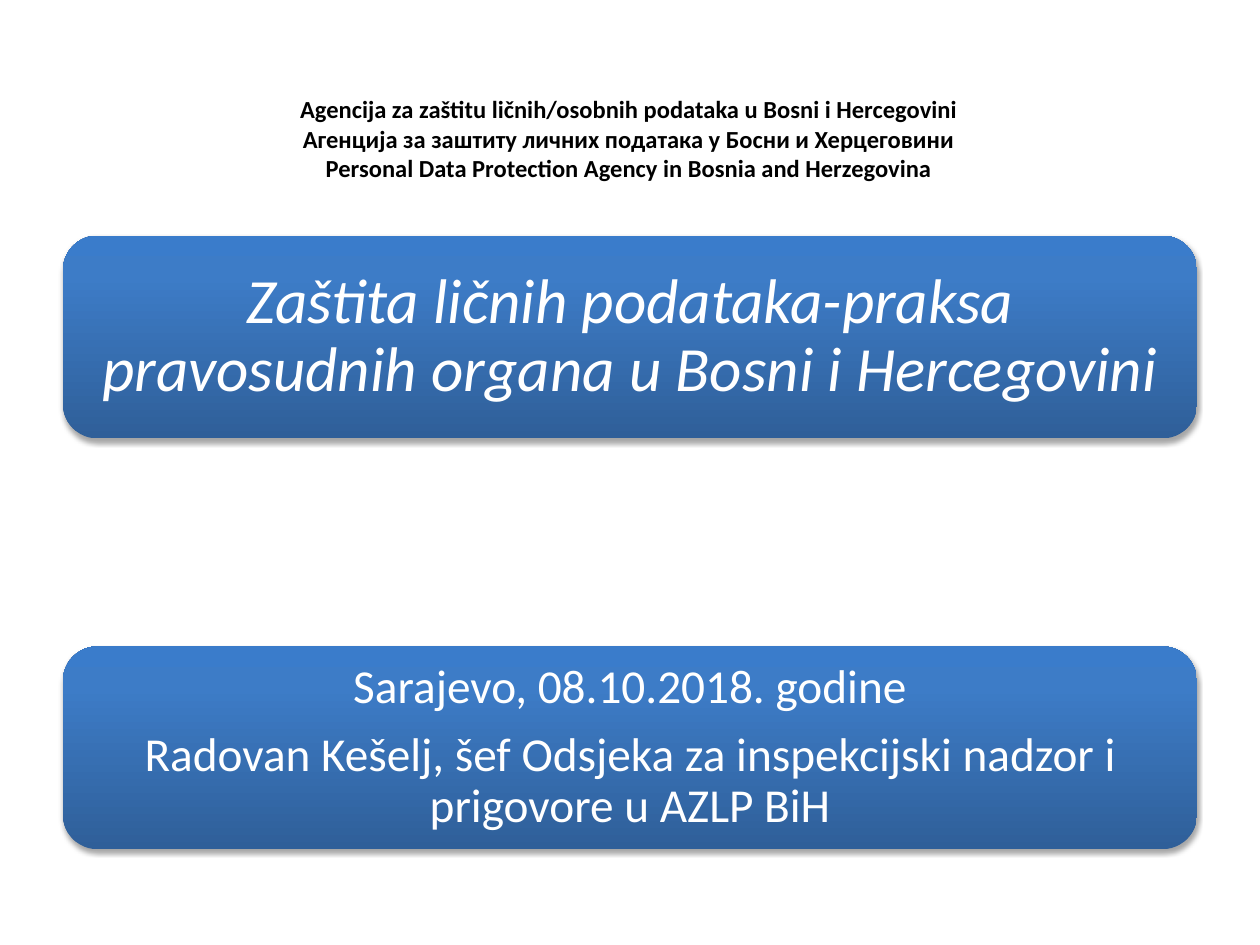
from lxml.etree import SubElement
from pptx import Presentation
from pptx.dml.color import RGBColor
from pptx.enum.shapes import MSO_SHAPE
from pptx.enum.text import MSO_ANCHOR, MSO_AUTO_SIZE, PP_ALIGN
from pptx.oxml import parse_xml
from pptx.oxml.ns import nsdecls, qn
from pptx.util import Inches, Pt

COLORS = {"ink": "000000", "light": "FFFFFF", "bottom": "2F5F99", "middle": "3D7CC7", "top": "3A7CCB"}
STOPS = [(0, "bottom"), (80, "middle"), (100, "top")]


def write_text(box, lines, size, color, bold=False, italic=False, inset=0.1,
               anchor=MSO_ANCHOR.MIDDLE, spacing=0.9, after=0):
    frame = box.text_frame
    frame.word_wrap = True
    frame.auto_size = MSO_AUTO_SIZE.NONE
    frame.vertical_anchor = anchor
    frame.margin_left = frame.margin_right = Inches(inset)
    frame.margin_top = frame.margin_bottom = Inches(min(inset, 0.15) if spacing < 1 else 0.05)
    frame.text = "\n".join(lines)
    for para in frame.paragraphs:
        para.alignment = PP_ALIGN.CENTER
        para.line_spacing = spacing
        para.space_before = Pt(0)
        para.space_after = Pt(after)
        for span in para.runs:
            span.font.name = "Calibri"
            span.font.size = Pt(size)
            span.font.bold = bold
            span.font.italic = italic
            span.font.color.rgb = RGBColor.from_string(COLORS[color])


def add_panel(page, left, top, width, height):
    panel = page.shapes.add_shape(MSO_SHAPE.ROUNDED_RECTANGLE, left, top, width, height)
    panel.adjustments[0] = 0.17
    panel.line.fill.background()
    panel.fill.gradient()
    gradient = panel._element.spPr.find(qn("a:gradFill"))
    stop_list = gradient.find(qn("a:gsLst"))
    for stop in list(stop_list):
        stop_list.remove(stop)
    for share, name in STOPS:
        stop = SubElement(stop_list, qn("a:gs"), pos=str(share * 1000))
        SubElement(stop, qn("a:srgbClr"), val=COLORS[name])
    gradient.find(qn("a:lin")).set("ang", str(270 * 60000))
    panel._element.spPr.append(parse_xml(
        f'<a:effectLst {nsdecls("a")}><a:outerShdw blurRad="{Pt(3.1)}" dist="{Pt(1.8)}" '
        f'dir="5400000" rotWithShape="0"><a:srgbClr val="{COLORS["ink"]}">'
        '<a:alpha val="35000"/></a:srgbClr></a:outerShdw></a:effectLst>'))


deck = Presentation()
deck.slide_width, deck.slide_height = Inches(10), Inches(7.5)
page = deck.slides.add_slide(deck.slide_layouts[5])

margin = Inches(0.5)
panel_width = deck.slide_width - 2 * margin
panel_height = Inches(1.61)
panel_tops = [Inches(1.87), Inches(5.13)]
pad = Inches(0.08)

agency = page.shapes.add_textbox(Inches(2.1), Inches(0.7), Inches(5.78), Inches(0.81))
write_text(agency, [
    "Agencija za zaštitu ličnih/osobnih podataka u Bosni i Hercegovini",
    "Агенција за заштиту личних података у Босни и Херцеговини",
    "Personal Data Protection Agency in Bosnia and Herzegovina",
], size=14, color="ink", bold=True, anchor=MSO_ANCHOR.TOP, spacing=1.0)

for top in panel_tops:
    add_panel(page, margin, top, panel_width, panel_height)

title = page.shapes.title
page.shapes._spTree.append(title._element)
details = page.shapes.add_textbox(0, 0, panel_width, panel_height)
for box, top in zip([title, details], panel_tops):
    box.left, box.top = margin + pad, top + pad
    box.width, box.height = panel_width - 2 * pad, panel_height - 2 * pad

write_text(title, ["Zaštita ličnih podataka-praksa pravosudnih organa u Bosni i Hercegovini"],
           size=36, color="light", italic=True, inset=0.15)
write_text(details, [
    "Sarajevo, 08.10.2018. godine",
    "Radovan Kešelj, šef Odsjeka za inspekcijski nadzor i prigovore u AZLP BiH",
], size=27, color="light", inset=0.11, after=9.45)

deck.save("out.pptx")
